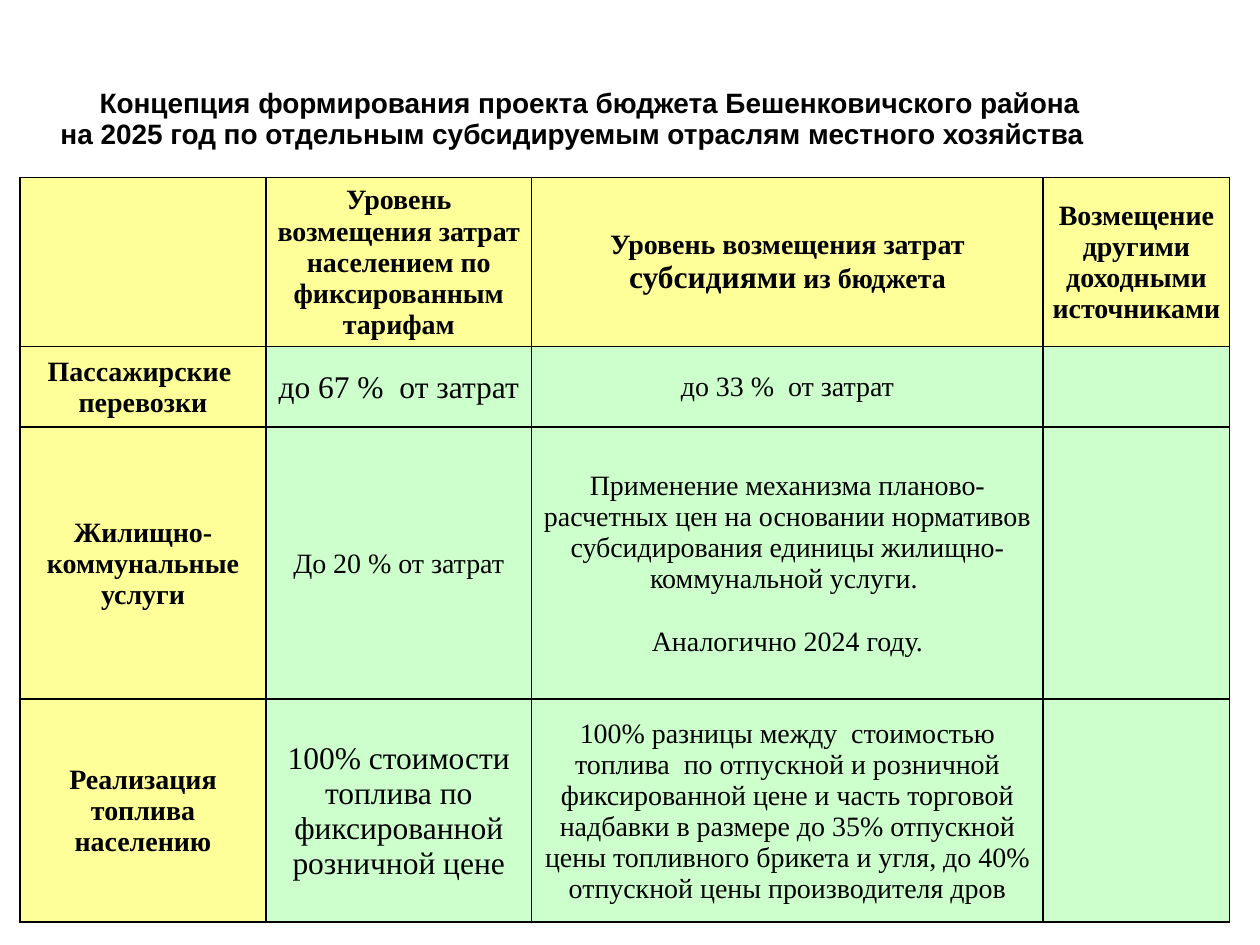
import pptx
import pptx.util
import pptx.dml.color
import pptx.enum.text
import pptx.oxml
import pptx.oxml.ns
from pptx.util import Inches

ALIGN = pptx.enum.text.PP_ALIGN
MIDDLE = pptx.enum.text.MSO_ANCHOR.MIDDLE


def color(code):
    return pptx.dml.color.RGBColor.from_string(code)


def write(par, text, size=16, bold=False, font="Times New Roman", ink="000000"):
    run = par.add_run()
    run.text = text
    run.font.size = pptx.util.Pt(size)
    run.font.bold = bold
    run.font.name = font
    run.font.color.rgb = color(ink)


def edge(cell, sides, code=None):
    """Draw 1 pt borders on the given sides (of L, R, T, B), or clear them."""
    props = cell._tc.get_or_add_tcPr()
    paint = "<a:noFill/>"
    if code:
        paint = f'<a:solidFill><a:srgbClr val="{code}"/></a:solidFill>'
    for spot, side in enumerate(sides):
        line = f'<a:ln{side} {pptx.oxml.ns.nsdecls("a")} w="12700">{paint}</a:ln{side}>'
        props.insert(spot, pptx.oxml.parse_xml(line))


class Deck:
    head = "FFFF99"
    body = "CCFFCC"
    line = "000000"

    def __init__(self, wide, high):
        self.show = pptx.Presentation()
        self.show.slide_width = Inches(wide)
        self.show.slide_height = Inches(high)
        self.slide = self.show.slides.add_slide(self.show.slide_layouts[6])

    def grid(self, left, top, cols, rows):
        frame = self.slide.shapes.add_table(
            len(rows), len(cols), Inches(left), Inches(top),
            Inches(sum(cols)), Inches(sum(rows)))
        table = frame.table
        table.first_row = table.horz_banding = False
        for col, wide in zip(table.columns, cols):
            col.width = Inches(wide)
        for row, high in zip(table.rows, rows):
            row.height = Inches(high)
        for cell in table.iter_cells():
            cell.vertical_anchor = MIDDLE
            cell.margin_left = cell.margin_right = cell.margin_top = Inches(0.01)
            cell.margin_bottom = 0
        return table

    def title(self, table, lines):
        """Merge the top row and fill it with (indent, text) lines."""
        cells = list(table.rows[0].cells)
        cells[0].merge(cells[-1])
        for cell in cells:
            cell.fill.background()
            edge(cell, "LRT")
            edge_low = 3
            edge(cell, "", self.line)
        frame = cells[0].text_frame
        for i, (indent, text) in enumerate(lines):
            par = frame.add_paragraph() if i else frame.paragraphs[0]
            par._p.get_or_add_pPr().set("marL", str(Inches(indent)))
            write(par, text, bold=True, font="Arial")

    def cell(self, cell, pars, fill, bold):
        """Fill a cell; each paragraph is a list of (text, size) runs."""
        cell.fill.solid()
        cell.fill.fore_color.rgb = color(fill)
        edge(cell, "LRTB", self.line)
        frame = cell.text_frame
        for i, runs in enumerate(pars):
            par = frame.add_paragraph() if i else frame.paragraphs[0]
            par.alignment = ALIGN.CENTER
            if i:
                par.space_before = pptx.util.Pt(18)
            for text, size in runs:
                write(par, text, size=size, bold=bold)


def plain(text, size=16):
    return [[(text, size)]]


TITLE = [
    (0.62, "Концепция формирования проекта бюджета Бешенковичского района"),
    (0.31, "на 2025 год по отдельным субсидируемым отраслям местного хозяйства"),
]
ROWS = [
    [[],
     plain("Уровень возмещения затрат населением по фиксированным тарифам"),
     [[("Уровень возмещения затрат ", 16), ("субсидиями", 18), (" из бюджета", 16)]],
     plain("Возмещение другими доходными источниками")],
    [plain("Пассажирские  перевозки"),
     plain("до 67 %  от затрат", 18),
     plain("до 33 %  от затрат"),
     []],
    [plain("Жилищно-коммунальные услуги"),
     plain("До 20 % от затрат"),
     plain("Применение механизма планово-расчетных цен на основании нормативов "
           "субсидирования единицы жилищно-коммунальной услуги. ")
     + plain("Аналогично 2024 году."),
     []],
    [plain("Реализация топлива населению"),
     plain("100% стоимости топлива по фиксированной розничной цене", 18),
     plain("100% разницы между  стоимостью топлива  по отпускной и розничной "
           "фиксированной цене и часть торговой надбавки в размере до 35% отпускной "
           "цены топливного брикета и угля, до 40% отпускной цены производителя дров"),
     []],
]


def main():
    deck = Deck(10, 7.5)
    table = deck.grid(0.16, 0.47, [1.95, 2.11, 4.06, 1.48],
                      [0.94, 1.34, 0.64, 2.16, 1.77])
    deck.title(table, TITLE)
    for r, row in enumerate(ROWS):
        for c, pars in enumerate(row):
            label = r == 0 or c == 0
            deck.cell(table.cell(r + 1, c), pars,
                      deck.head if label else deck.body, label)
    deck.show.save("out.pptx")


if __name__ == "__main__":
    main()
